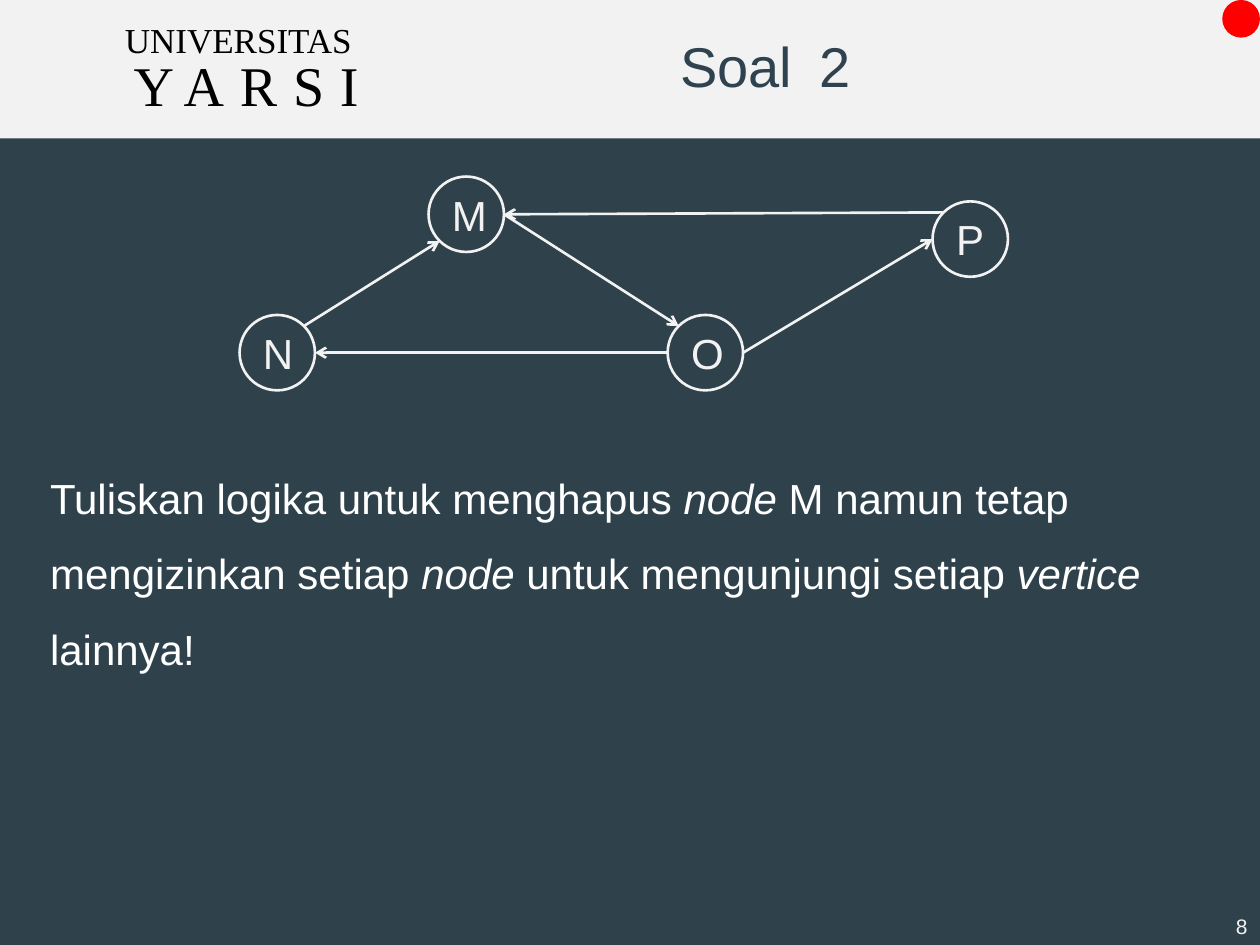
from dataclasses import dataclass
from math import cos, radians, sin

from lxml.etree import SubElement
from pptx import Presentation
from pptx.dml.color import RGBColor
from pptx.enum.shapes import MSO_CONNECTOR, MSO_SHAPE
from pptx.enum.text import MSO_ANCHOR, PP_ALIGN
from pptx.oxml.ns import qn
from pptx.util import Cm, Pt

LIGHT, DARK, TITLE_INK = "F2F2F2", "2F424C", "2F424F"
WHITE, BLACK, RED = "FFFFFF", "000000", "FF0000"
NODE_SIZE = 1.52


@dataclass(frozen=True)
class Node:
    name: str
    left: float
    top: float

    def rim(self, degrees: float) -> tuple[float, float]:
        """Point on the circle, counted clockwise from its right side."""
        radius = NODE_SIZE / 2
        return (self.left + radius * (1 + cos(radians(degrees))),
                self.top + radius * (1 + sin(radians(degrees))))


@dataclass(frozen=True)
class Edge:
    source: str
    source_angle: float
    target: str
    target_angle: float


@dataclass(frozen=True)
class Label:
    text: str
    left: float
    top: float
    width: float
    height: float
    size: float
    color: str
    font: str = "Arial"
    align: PP_ALIGN = PP_ALIGN.LEFT
    anchor: MSO_ANCHOR = MSO_ANCHOR.TOP
    wrap: bool = False
    spacing: int = 0


NODES = {node.name: node for node in (
    Node("M", 8.64, 3.56), Node("N", 4.83, 6.35),
    Node("O", 13.46, 6.35), Node("P", 18.8, 4.06))}
EDGES = (
    Edge("M", 0, "O", 225), Edge("N", 315, "M", 135), Edge("O", 0, "P", 180),
    Edge("O", 180, "N", 0), Edge("P", 225, "M", 0))
LABELS = (
    Label("Soal", 13.46, 0.51, 2.79, 1.78, 32, TITLE_INK),
    Label("UNIVERSITAS", 2.24, 0.25, 5.13, 1.12, 20, BLACK,
          "Times New Roman", PP_ALIGN.CENTER),
    Label("YARSI", 2.26, 0.89, 5.41, 1.63, 32, BLACK,
          "Times New Roman", PP_ALIGN.CENTER, spacing=900),
    Label("8", 24.38, 18.29, 1.02, 0.76, 12, LIGHT,
          align=PP_ALIGN.RIGHT, anchor=MSO_ANCHOR.BOTTOM, wrap=True))
QUESTION = (
    ("Tuliskan logika untuk menghapus ", False), ("node", True),
    (" M namun tetap mengizinkan setiap ", False), ("node", True),
    (" untuk mengunjungi setiap ", False), ("vertice", True),
    (" lainnya!", False))


def rgb(color: str) -> RGBColor:
    return RGBColor.from_string(color)


def style_font(font, size: float, color: str, name: str = "Arial") -> None:
    font.size, font.name = Pt(size), name
    font.color.rgb = rgb(color)


def add_shape(page, kind, left, top, width, height, fill=None, line=None):
    shape = page.shapes.add_shape(kind, Cm(left), Cm(top), Cm(width), Cm(height))
    shape.shadow.inherit = False
    if fill:
        shape.fill.solid()
        shape.fill.fore_color.rgb = rgb(fill)
    else:
        shape.fill.background()
    if line:
        shape.line.color.rgb = rgb(line)
        shape.line.width = Pt(1.5)
    else:
        shape.line.fill.background()
    return shape


def add_label(page, label: Label) -> None:
    box = page.shapes.add_textbox(
        Cm(label.left), Cm(label.top), Cm(label.width), Cm(label.height))
    frame = box.text_frame
    frame.text = label.text
    frame.word_wrap, frame.vertical_anchor = label.wrap, label.anchor
    para = frame.paragraphs[0]
    para.alignment = label.align
    span = para.runs[0]
    style_font(span.font, label.size, label.color, label.font)
    if label.spacing:
        span.font._element.set("spc", str(label.spacing))


def add_title(page, text: str) -> None:
    title = page.shapes.title
    title.left, title.top, title.width, title.height = (
        Cm(16.26), Cm(0.51), Cm(2.03), Cm(1.78))
    frame = title.text_frame
    frame.text = text
    frame.vertical_anchor = MSO_ANCHOR.TOP
    para = frame.paragraphs[0]
    para.alignment = PP_ALIGN.LEFT
    style_font(para.runs[0].font, 32, TITLE_INK)


def add_question(page) -> None:
    box = page.shapes.add_textbox(Cm(0.76), Cm(8.89), Cm(23.88), Cm(5.33))
    box.text_frame.word_wrap = True
    para = box.text_frame.paragraphs[0]
    para.line_spacing = 1.5
    for text, italic in QUESTION:
        span = para.add_run()
        span.text = text
        style_font(span.font, 24, WHITE)
        span.font.italic = italic


def add_node(page, node: Node) -> None:
    circle = add_shape(page, MSO_SHAPE.OVAL, node.left, node.top,
                       NODE_SIZE, NODE_SIZE, line=LIGHT)
    frame = circle.text_frame
    frame.text = node.name
    frame.vertical_anchor = MSO_ANCHOR.MIDDLE
    para = frame.paragraphs[0]
    para.alignment = PP_ALIGN.CENTER
    style_font(para.runs[0].font, 24, LIGHT)


def add_edge(page, edge: Edge) -> None:
    start = NODES[edge.source].rim(edge.source_angle)
    end = NODES[edge.target].rim(edge.target_angle)
    arrow = page.shapes.add_connector(
        MSO_CONNECTOR.STRAIGHT, *(Cm(value) for value in start + end))
    arrow.line.color.rgb = rgb(LIGHT)
    arrow.line.width = Pt(1.5)
    SubElement(arrow.line._get_or_add_ln(), qn("a:tailEnd"), type="arrow")
    SubElement(arrow._element.spPr, qn("a:effectLst"))


def main() -> None:
    deck = Presentation()
    deck.slide_width, deck.slide_height = Cm(25.4), Cm(19.05)
    page = deck.slides.add_slide(deck.slide_layouts[5])
    page.background.fill.solid()
    page.background.fill.fore_color.rgb = rgb(LIGHT)

    add_shape(page, MSO_SHAPE.RECTANGLE, 0, 2.79, 25.4, 16.26, fill=DARK)
    for label in LABELS:
        add_label(page, label)
    add_title(page, "2")
    add_question(page)
    for node in NODES.values():
        add_node(page, node)
    for edge in EDGES:
        add_edge(page, edge)
    add_shape(page, MSO_SHAPE.OVAL, 24.64, 0, 0.76, 0.76, fill=RED)
    deck.save("out.pptx")


if __name__ == "__main__":
    main()
